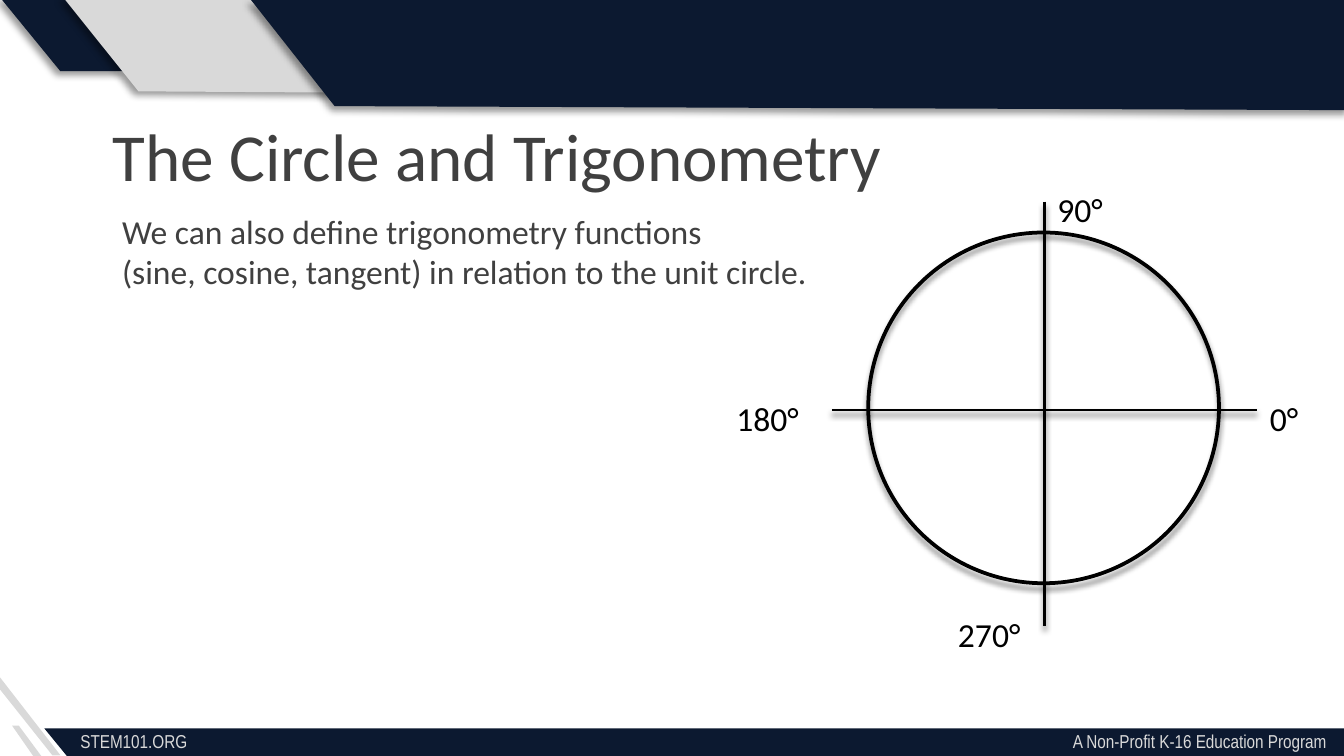
import pptx
import pptx.dml.color
import pptx.enum.shapes
import pptx.enum.text
import pptx.oxml
import pptx.oxml.ns
import pptx.util
from pptx.util import Inches

COLORS = {"navy": "0C1930", "silver": "D9D9D9", "text": "404040", "black": "000000"}

# Shadow settings: opacity %, blur pt, distance pt, direction in degrees
BAND_SHADOW = (40, 4, 3, 135)
DIAGRAM_SHADOW = (45, 3, 2.4, 90)


def rgb(name):
    return pptx.dml.color.RGBColor.from_string(COLORS[name])


def set_shadow(shape, shadow):
    opacity, blur, dist, angle = shadow
    spPr = shape._element.spPr
    for old in spPr.findall(pptx.oxml.ns.qn("a:effectLst")):
        spPr.remove(old)
    spPr.append(pptx.oxml.parse_xml(
        f'<a:effectLst {pptx.oxml.ns.nsdecls("a")}>'
        f'<a:outerShdw blurRad="{pptx.util.Pt(blur)}" dist="{pptx.util.Pt(dist)}" '
        f'dir="{angle * 60000}" rotWithShape="0"><a:srgbClr val="{COLORS["black"]}">'
        f'<a:alpha val="{opacity * 1000}"/></a:srgbClr></a:outerShdw></a:effectLst>'))


def add_band(s, points, color, shadow=None):
    pts = [(Inches(x), Inches(y)) for x, y in points]
    builder = s.shapes.build_freeform(*pts[0], scale=1.0)
    builder.add_line_segments(pts[1:], close=True)
    sp = builder.convert_to_shape()
    sp.shadow.inherit = False
    sp.fill.solid()
    sp.fill.fore_color.rgb = rgb(color)
    sp.line.fill.background()
    if shadow:
        set_shadow(sp, shadow)


def add_text(s, box, lines, size, color, font="Calibri", right_tab=None):
    tf = s.shapes.add_textbox(*map(Inches, box)).text_frame
    tf.word_wrap = True
    p = tf.paragraphs[0]
    if right_tab:
        p._p.get_or_add_pPr().append(pptx.oxml.parse_xml(
            f'<a:tabLst {pptx.oxml.ns.nsdecls("a")}>'
            f'<a:tab pos="{Inches(right_tab)}" algn="r"/></a:tabLst>'))
    for i, line in enumerate(lines):
        if i:
            p.add_line_break()
        r = p.add_run()
        r.text = line
        r.font.name = font
        r.font.size = pptx.util.Pt(size)
        r.font.color.rgb = rgb(color)


def style_outline(shape, width):
    shape.line.color.rgb = rgb("black")
    shape.line.width = pptx.util.Pt(width)
    set_shadow(shape, DIAGRAM_SHADOW)


def add_circle(s, x, y, size):
    sp = s.shapes.add_shape(
        pptx.enum.shapes.MSO_SHAPE.OVAL, *map(Inches, (x, y, size, size)))
    sp.fill.background()
    style_outline(sp, 2)


def add_axis(s, x1, y1, x2, y2):
    line = s.shapes.add_connector(
        pptx.enum.shapes.MSO_CONNECTOR.STRAIGHT, *map(Inches, (x1, y1, x2, y2)))
    style_outline(line, 1.5)


def main():
    prs = pptx.Presentation()
    prs.slide_width = Inches(10)
    prs.slide_height = Inches(10) * 9 // 16
    s = prs.slides.add_slide(prs.slide_layouts[6])

    # Header bands
    add_band(s, [(0.45, 0.53), (0, -0.02), (0.48, -0.02), (0.93, 0.53)],
             "navy", BAND_SHADOW)
    add_band(s, [(1.03, 0.68), (0.47, -0.02), (2.04, -0.02), (2.59, 0.69)],
             "silver", BAND_SHADOW)
    add_band(s, [(2.49, 0.79), (1.86, -0.01), (10.02, -0.01), (10.04, 0.82)],
             "navy", BAND_SHADOW)

    # Footer stripes, bar and text
    add_band(s, [(0.31, 5.63), (0.25, 5.63), (0.09, 5.4), (0.14, 5.4)], "silver")
    add_band(s, [(0.45, 5.62), (0.39, 5.62), (0, 5.13), (0, 5.04)], "silver")
    add_band(s, [(0.51, 5.64), (0.33, 5.42), (10.07, 5.42), (10.06, 5.65)], "navy")
    add_text(s, (0.5, 5.38, 9.5, 0.27),
             ["STEM101.ORG\tA Non-Profit K-16 Education Program"],
             10, "silver", "Arial Narrow", right_tab=9.27)

    # Title and body
    add_text(s, (0.74, 0.8, 9.4, 1.44), ["The Circle and Trigonometry"], 36, "text")
    add_text(s, (0.81, 1.52, 9, 4.95),
             ["We can also define trigonometry functions",
              "(sine, cosine, tangent) in relation to the unit circle."], 18, "text")

    # Unit circle with axes
    add_circle(s, 6.46, 1.73, 2.61)
    add_axis(s, 7.77, 1.5, 7.77, 4.66)
    add_axis(s, 6.19, 3.05, 9.35, 3.05)

    # Angle labels
    for label, x, y, w in [("0°", 9.35, 2.91, 0.48), ("90°", 7.77, 1.36, 0.9),
                           ("180°", 5.38, 2.91, 0.81), ("270°", 7.03, 4.52, 0.87)]:
        add_text(s, (x, y, w, 0.4), [label], 18, "black")

    prs.save("out.pptx")


if __name__ == "__main__":
    main()
